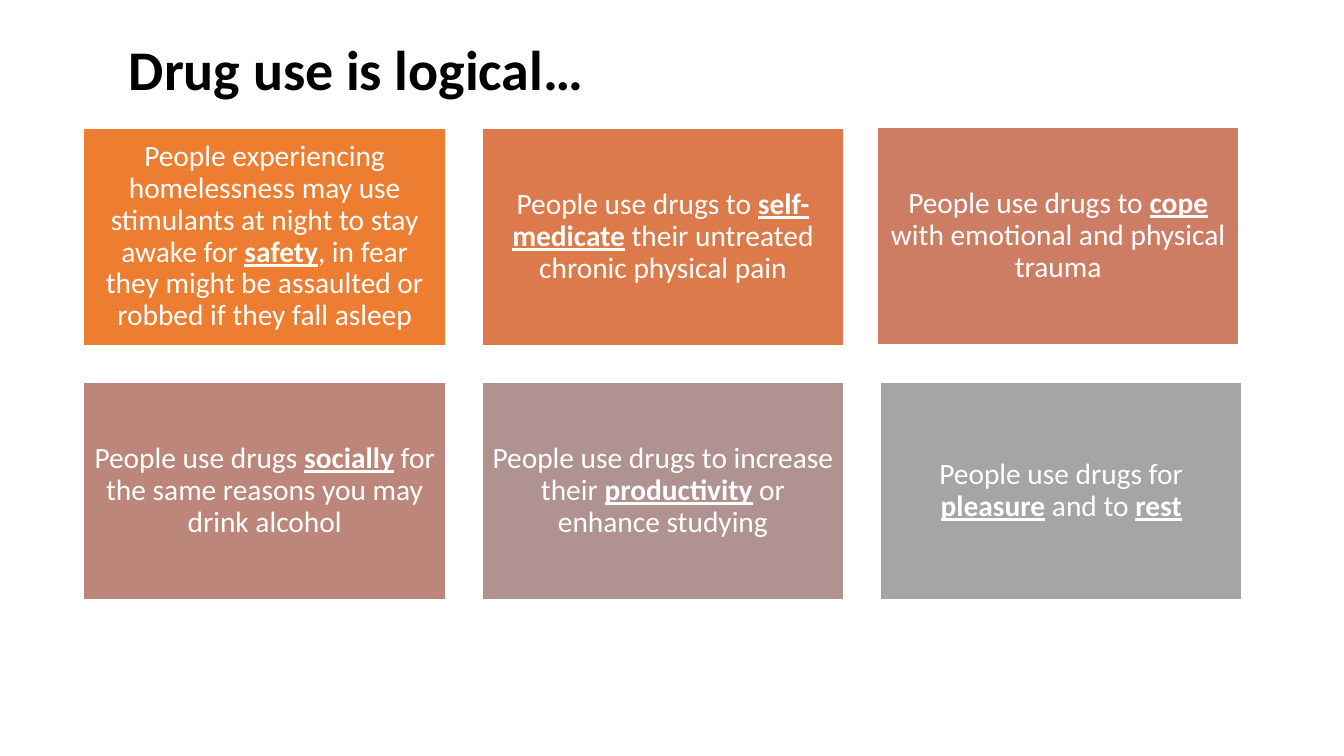
import pptx
import pptx.dml.color
import pptx.enum.shapes
import pptx.enum.text
import pptx.util

RGBColor = pptx.dml.color.RGBColor
PP_ALIGN = pptx.enum.text.PP_ALIGN
MSO_ANCHOR = pptx.enum.text.MSO_ANCHOR

PX = 9144  # EMU, 100 px to the inch
FONT = "Calibri"
BLACK = RGBColor(0x00, 0x00, 0x00)
WHITE = RGBColor(0xFF, 0xFF, 0xFF)
ORANGE = RGBColor(0xED, 0x7D, 0x31)
COPPER = RGBColor(0xDC, 0x7A, 0x4B)
CORAL = RGBColor(0xCC, 0x7D, 0x64)
ROSE = RGBColor(0xBD, 0x86, 0x7B)
MAUVE = RGBColor(0xB0, 0x93, 0x91)
GREY = RGBColor(0xA5, 0xA5, 0xA5)

COLUMNS = 3
CARD_W, CARD_H = 359, 216
LEFT, TOP = 83, 127
STEP_X, STEP_Y = 395, 252

# Fill, text with key words between asterisks, nudge off the grid
REASONS = [
    (ORANGE, "People experiencing homelessness may use stimulants at night to stay "
             "awake for *safety*, in fear they might be assaulted or robbed if they "
             "fall asleep", (0, 0)),
    (COPPER, "People use drugs to *self-medicate* their untreated chronic physical pain",
     (0, 0)),
    (CORAL, "People use drugs to *cope* with emotional and physical trauma", (-3, -1)),
    (ROSE, "People use drugs *socially* for the same reasons you may drink alcohol",
     (0, 0)),
    (MAUVE, "People use drugs to increase their *productivity* or enhance studying",
     (0, 0)),
    (GREY, "People use drugs for *pleasure* and to *rest*", (0, 0)),
]


class Deck:
    def __init__(self, width, height):
        self.prs = pptx.Presentation()
        self.prs.slide_width = pptx.util.Emu(width * PX)
        self.prs.slide_height = pptx.util.Emu(height * PX)
        self.slide = self.prs.slides.add_slide(self.prs.slide_layouts[6])

    def box(self, x, y, w, h):
        return [pptx.util.Emu(v * PX) for v in (x, y, w, h)]

    def set_text(self, sp, text, size, color, align, anchor, inset):
        """Fill a shape with one paragraph and return that paragraph."""
        tf = sp.text_frame
        tf.word_wrap = True
        tf.vertical_anchor = anchor
        tf.margin_left = tf.margin_right = pptx.util.Emu(inset * PX)
        tf.margin_top = tf.margin_bottom = pptx.util.Emu(inset * PX)
        p = tf.paragraphs[0]
        p.alignment = align
        p.line_spacing = 0.9
        for i, part in enumerate(text.split("*")):
            if not part:
                continue
            r = p.add_run()
            r.text = part
            r.font.name = FONT
            r.font.size = pptx.util.Pt(size)
            r.font.color.rgb = color
            r.font.bold = r.font.underline = i % 2 == 1
        return p

    def title(self, text, x, y, w, h):
        sp = self.slide.shapes.add_textbox(*self.box(x, y, w, h))
        p = self.set_text(sp, text, 40, BLACK, PP_ALIGN.LEFT, MSO_ANCHOR.BOTTOM, 10)
        p.runs[0].font.bold = True

    def card(self, text, fill, x, y):
        sp = self.slide.shapes.add_shape(
            pptx.enum.shapes.MSO_SHAPE.RECTANGLE, *self.box(x, y, CARD_W, CARD_H))
        sp.shadow.inherit = False
        sp.fill.solid()
        sp.fill.fore_color.rgb = fill
        sp.line.color.rgb = WHITE
        sp.line.width = pptx.util.Pt(1)
        self.set_text(sp, text, 21, WHITE, PP_ALIGN.CENTER, MSO_ANCHOR.MIDDLE, 9)


def main():
    deck = Deck(1333, 750)
    for i, (fill, text, (dx, dy)) in enumerate(REASONS):
        row, col = divmod(i, COLUMNS)
        deck.card(text, fill, LEFT + col * STEP_X + dx, TOP + row * STEP_Y + dy)
    deck.title("Drug use is logical…", 118, 27, 1097, 85)
    deck.prs.save("out.pptx")


if __name__ == "__main__":
    main()
